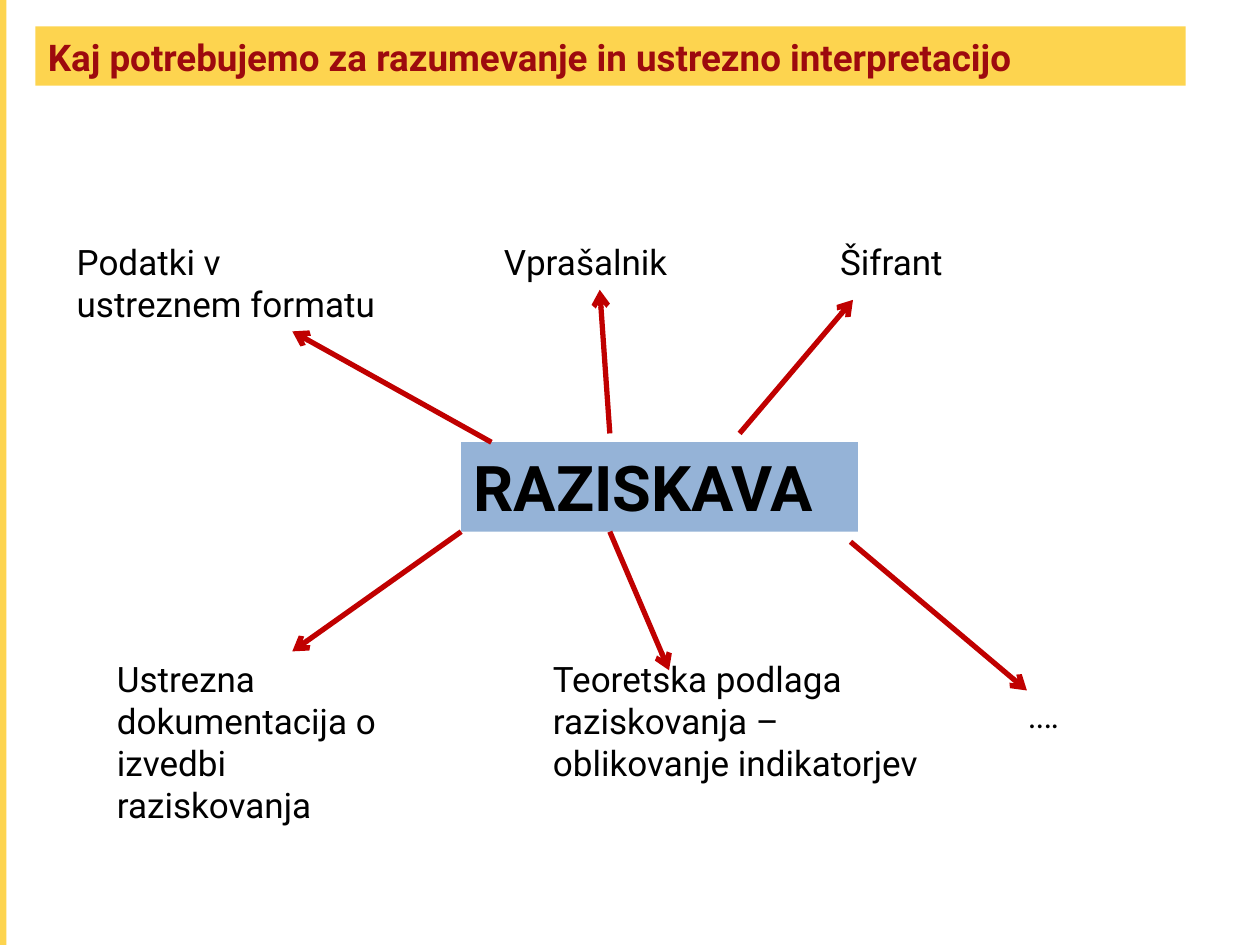
from pptx import Presentation
from pptx.dml.color import RGBColor
from pptx.enum.shapes import MSO_CONNECTOR, MSO_SHAPE
from pptx.enum.text import MSO_ANCHOR, MSO_AUTO_SIZE, PP_ALIGN
from pptx.oxml.ns import qn
from pptx.util import Inches, Pt
from lxml.etree import SubElement

COLORS = {"yellow": "FDD44F", "title": "9D0A0E", "blue": "95B3D7",
          "arrow": "C00000", "text": "000000"}

TITLE = "Kaj potrebujemo za razumevanje in ustrezno interpretacijo"
CENTER = "RAZISKAVA"
TOP, BOTTOM = 1.86, 5.17  # upper and lower row of labels

# text, (left, top, width, height), arrow start, arrow end, format
NEEDS = [
    ("Podatki v ustreznem formatu", (0.51, TOP, 2.68, 0.77),
     (3.9, 3.51), (2.32, 2.63), {}),
    ("Vprašalnik", (3.9, TOP, 1.57, 0.44), (4.84, 3.44), (4.76, 2.3), {}),
    ("Šifrant", (6.57, TOP, 1.97, 0.44), (5.87, 3.44), (6.77, 2.38), {}),
    ("Ustrezna dokumentacija o izvedbi raziskovanja", (0.83, BOTTOM, 2.36, 1.45),
     (3.66, 4.22), (2.32, 5.17), {}),
    ("Teoretska podlaga raziskovanja – oblikovanje indikatorjev",
     (4.29, BOTTOM, 3.39, 1.11), (4.84, 4.22), (5.31, 5.32), {}),
    ("….", (8.07, 5.48, 1.34, 0.4), (6.75, 4.3), (8.15, 5.48),
     {"size": 18, "font": "Calibri"}),
]


def color(name):
    return RGBColor.from_string(COLORS[name])


def inches(values):
    return [Inches(value) for value in values]


def write(shape, text, size=20, font="Roboto", ink="text", bold=False,
          anchor=MSO_ANCHOR.TOP, fit=MSO_AUTO_SIZE.SHAPE_TO_FIT_TEXT):
    frame = shape.text_frame
    frame.word_wrap = True
    frame.auto_size = fit
    frame.vertical_anchor = anchor
    para = frame.paragraphs[0]
    para.alignment = PP_ALIGN.LEFT
    span = para.add_run()
    span.text = text
    span.font.size = Pt(size)
    span.font.name = font
    span.font.bold = bold
    span.font.color.rgb = color(ink)


def add_block(page, area, fill):
    block = page.shapes.add_shape(MSO_SHAPE.RECTANGLE, *inches(area))
    block.shadow.inherit = False
    block.fill.solid()
    block.fill.fore_color.rgb = color(fill)
    block.line.fill.background()
    return block


def add_arrow(page, start, end):
    arrow = page.shapes.add_connector(MSO_CONNECTOR.STRAIGHT, *inches(start + end))
    arrow.line.color.rgb = color("arrow")
    arrow.line.width = Pt(3)
    SubElement(arrow.line._get_or_add_ln(), qn("a:tailEnd"), type="arrow")
    SubElement(arrow._element.spPr, qn("a:effectLst"))


def main():
    deck = Presentation()
    deck.slide_width, deck.slide_height = Inches(10), Inches(7.5)
    page = deck.slides.add_slide(deck.slide_layouts[5])

    # Side bar and title
    add_block(page, (-0.04, 0, 0.09, 7.5), "yellow")
    title = page.shapes.title
    title.left, title.top, title.width, title.height = inches((0.28, 0.21, 9.13, 0.47))
    title.fill.solid()
    title.fill.fore_color.rgb = color("yellow")
    write(title, TITLE, size=21, ink="title", bold=True,
          anchor=MSO_ANCHOR.BOTTOM, fit=MSO_AUTO_SIZE.NONE)

    # Central block
    center = add_block(page, (3.66, 3.51, 3.15, 0.71), "blue")
    write(center, CENTER, size=36, bold=True)

    # Labels, then the arrows that lead to them
    for text, area, _, _, style in NEEDS:
        write(page.shapes.add_textbox(*inches(area)), text, **style)
    for _, _, start, end, _ in NEEDS:
        add_arrow(page, start, end)

    deck.save("out.pptx")


if __name__ == "__main__":
    main()
